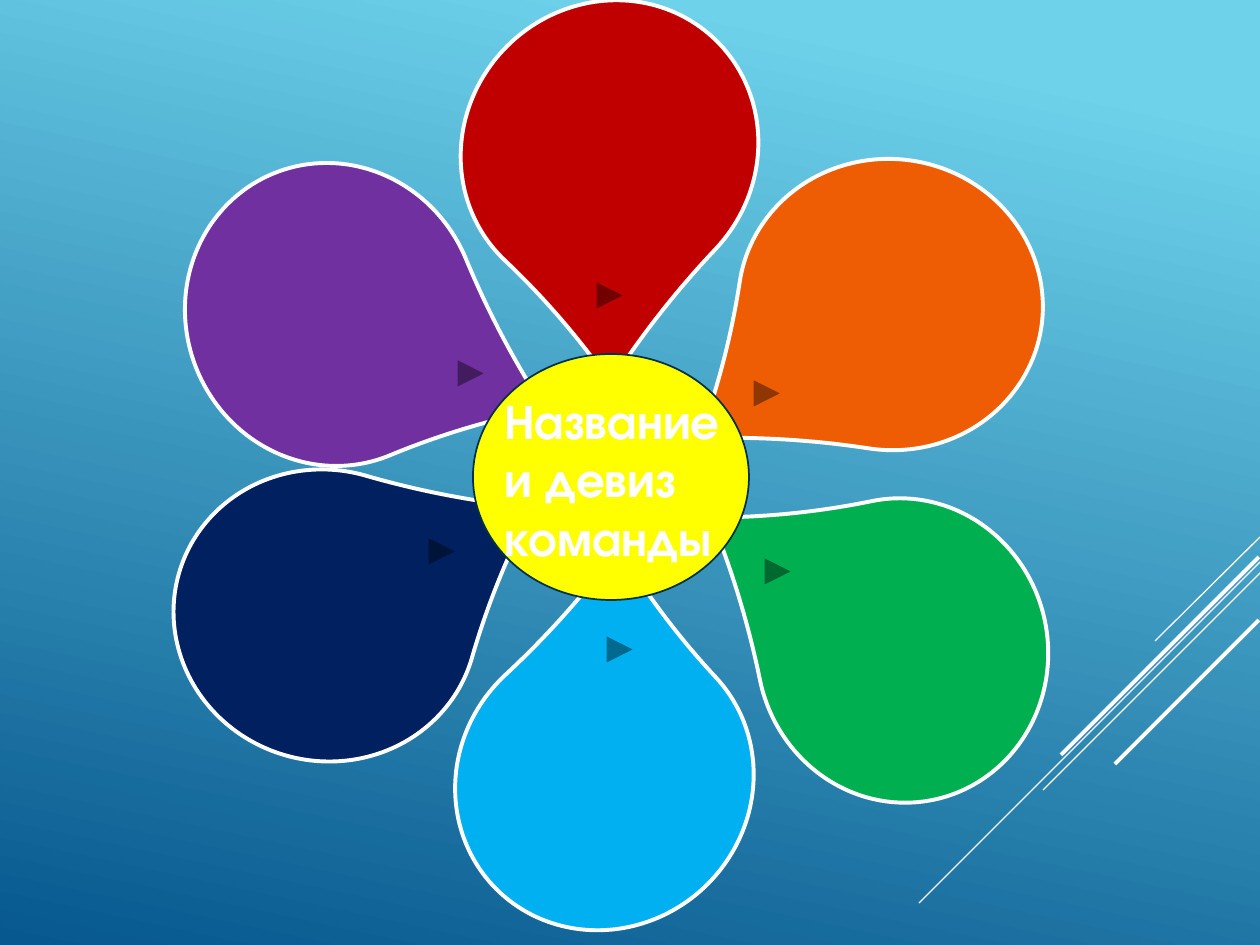
from dataclasses import dataclass

from lxml import etree
from pptx import Presentation
from pptx import util as u
from pptx.dml.color import RGBColor
from pptx.enum import shapes, text
from pptx.oxml.ns import qn

PX = 914400 / 126
PETAL_SIZE = (305, 291)
BUTTON_SIZE = (39, 39)


@dataclass(frozen=True)
class Theme:
    sky_light: str = "6ED2EB"
    sky_dark: str = "06588E"
    white: str = "FFFFFF"
    core: str = "FFFF00"
    core_edge: str = "043148"
    font: str = "TeX Gyre Adventor"
    heading: float = 28
    thin: float = 0.75
    edge: float = 1
    thick: float = 2.25


@dataclass(frozen=True)
class Petal:
    color: str
    corner: tuple
    rotation: float
    button: tuple


THEME = Theme()

PETALS = [
    Petal("7030A0", (179, 169), 67.5, (452, 354)),
    Petal("002060", (173, 470), 16.1, (423, 532)),
    Petal("00B0F0", (452, 636), 317.1, (601, 630)),
    Petal("C00000", (457, 4), 133.4, (591, 276)),
    Petal("EE5D04", (738, 159), 188.7, (748, 374)),
    Petal("00B050", (750, 505), 258.4, (759, 552)),
]

STREAKS = [
    ((1260, 537), (1155, 641), THEME.thin),
    ((1260, 562), (919, 903), THEME.thin),
    ((1260, 573), (1043, 790), THEME.thin),
    ((1259, 557), (1061, 755), THEME.thick),
    ((1259, 620), (1115, 764), THEME.thick),
]


def px(*lengths):
    return [u.Emu(round(length * PX)) for length in lengths]


def rgb(color):
    return RGBColor.from_string(color)


def set_line(line, color, width):
    line.color.rgb = rgb(color)
    line.width = u.Pt(width)


def paint_sky(slide):
    fill = slide.background.fill
    fill.gradient()
    fill.gradient_angle = 360 - 102
    stops = [(0.1, THEME.sky_light), (1, THEME.sky_dark)]
    for stop, (position, color) in zip(fill.gradient_stops, stops):
        stop.position = position
        stop.color.rgb = rgb(color)


def add_streak(slide, start, end, width):
    streak = slide.shapes.add_connector(
        shapes.MSO_CONNECTOR.STRAIGHT, *px(*start, *end))
    set_line(streak.line, THEME.white, width)
    etree.SubElement(streak._element.spPr, qn("a:effectLst"))


def add_figure(slide, kind, corner, size, fill, edge, width):
    figure = slide.shapes.add_shape(kind, *px(*corner, *size))
    figure.shadow.inherit = False
    figure.fill.solid()
    figure.fill.fore_color.rgb = rgb(fill)
    set_line(figure.line, edge, width)
    return figure


def add_petal(slide, petal):
    leaf = add_figure(slide, shapes.MSO_SHAPE.TEAR, petal.corner, PETAL_SIZE,
                      petal.color, THEME.white, THEME.thick)
    leaf.adjustments[0] = 1.107
    leaf.rotation = petal.rotation


def add_button(slide, petal):
    add_figure(slide, shapes.MSO_SHAPE.ACTION_BUTTON_FORWARD_OR_NEXT,
               petal.button, BUTTON_SIZE, petal.color, petal.color, THEME.edge)


def add_caption(slide, corner, size, lines):
    caption = slide.shapes.add_textbox(*px(*corner, *size)).text_frame
    caption.word_wrap = True
    caption.auto_size = text.MSO_AUTO_SIZE.SHAPE_TO_FIT_TEXT
    for index, words in enumerate(lines):
        paragraph = caption.add_paragraph() if index else caption.paragraphs[0]
        run = paragraph.add_run()
        run.text = words
        run.font.name = THEME.font
        run.font.size = u.Pt(THEME.heading)
        run.font.bold = True
        run.font.color.rgb = rgb(THEME.white)


def main():
    deck = Presentation()
    deck.slide_width, deck.slide_height = px(1260, 945)
    slide = deck.slides.add_slide(deck.slide_layouts[6])
    paint_sky(slide)
    for streak in STREAKS:
        add_streak(slide, *streak)
    for petal in PETALS:
        add_petal(slide, petal)
    add_figure(slide, shapes.MSO_SHAPE.OVAL, (473, 354), (276, 246),
               THEME.core, THEME.core_edge, THEME.edge)
    add_caption(slide, (492, 384), (266, 229), ["Название и девиз", "команды"])
    for petal in PETALS:
        add_button(slide, petal)
    deck.save("out.pptx")


if __name__ == "__main__":
    main()
